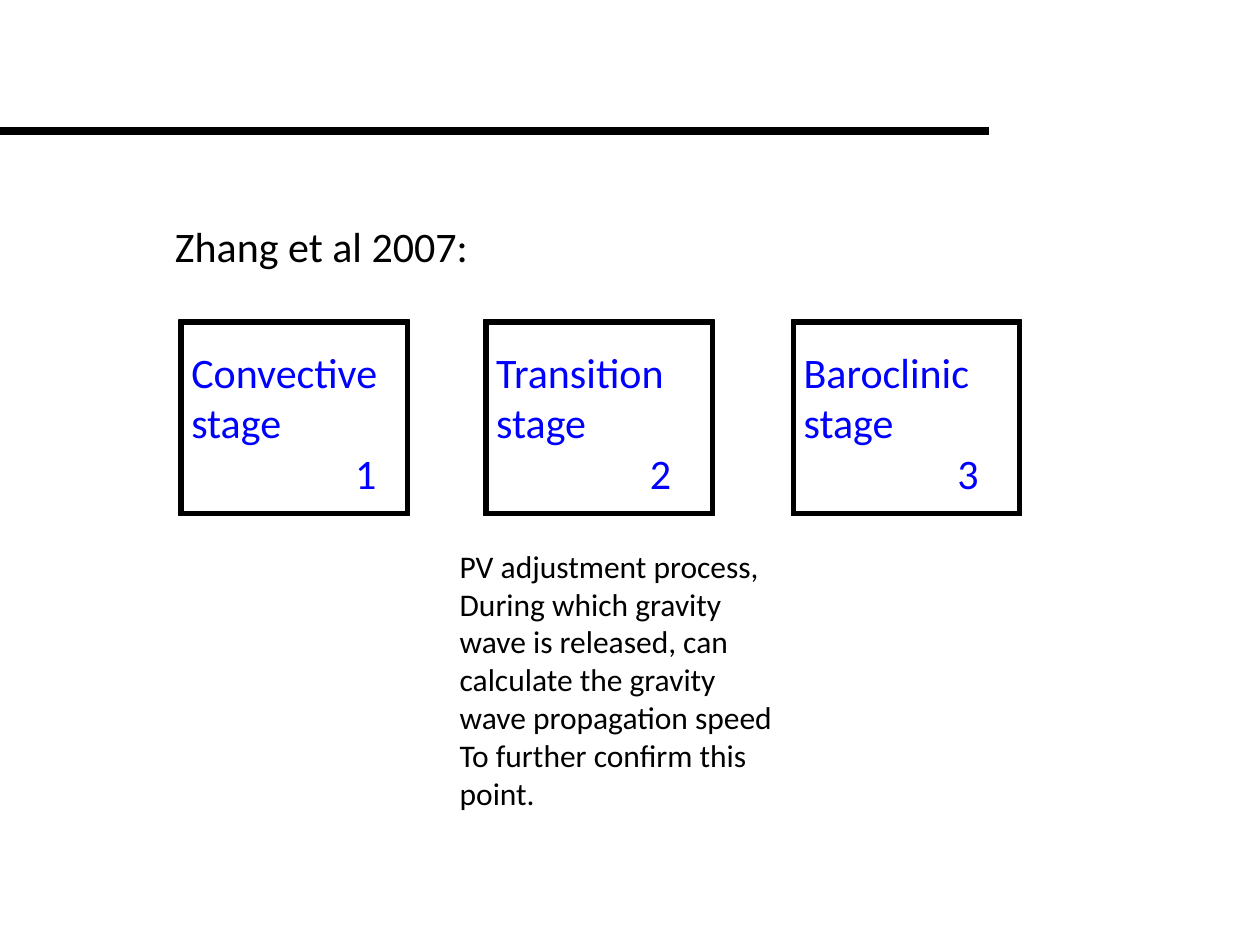
from pptx import Presentation
from pptx import util as u
from pptx.dml.color import RGBColor
from pptx.enum import shapes, text
from pptx.oxml import parse_xml
from pptx.oxml.ns import nsdecls


def colour(value):
    return RGBColor.from_string(value)


class StageSlide:
    font = "Calibri"
    ink = "000000"
    accent = "0000FF"

    def __init__(self, slide):
        self.slide = slide

    def rule(self, left, right, y, weight):
        line = self.slide.shapes.add_connector(
            shapes.MSO_CONNECTOR.STRAIGHT,
            u.Inches(left), u.Inches(y), u.Inches(right), u.Inches(y))
        line.line.color.rgb = colour(self.ink)
        line.line.width = u.Pt(weight)
        line._element.spPr.append(parse_xml(f"<a:effectLst {nsdecls('a')}/>"))

    def words(self, left, top, width, height, lines, size, ink, wrap=True):
        box = self.slide.shapes.add_textbox(
            u.Inches(left), u.Inches(top), u.Inches(width), u.Inches(height))
        frame = box.text_frame
        frame.text = "\n".join(lines)
        frame.word_wrap = wrap
        frame.auto_size = text.MSO_AUTO_SIZE.SHAPE_TO_FIT_TEXT
        for paragraph in frame.paragraphs:
            for run in paragraph.runs:
                run.font.name = self.font
                run.font.size = u.Pt(size)
                run.font.color.rgb = colour(ink)
        return frame

    def stage(self, left, name, number, indent):
        border = self.slide.shapes.add_shape(
            shapes.MSO_SHAPE.FRAME,
            u.Inches(left), u.Inches(2.54), u.Inches(1.83), u.Inches(1.55))
        border.adjustments[0] = 0.021
        border.shadow.inherit = False
        border.fill.solid()
        border.fill.fore_color.rgb = colour(self.ink)
        border.line.color.rgb = colour(self.ink)
        border.line.width = u.Pt(0.75)
        label = self.words(left, 2.7, 1.83, 1.31, [name, str(number)], 24, self.accent)
        properties = label.paragraphs[1]._p.get_or_add_pPr()
        properties.set("marL", str(u.Inches(indent)))


def main():
    deck = Presentation()
    deck.slide_width, deck.slide_height = u.Inches(10), u.Inches(7.5)
    page = StageSlide(deck.slides.add_slide(deck.slide_layouts[6]))

    page.words(1.29, 1.7, 2.55, 0.5, ["Zhang et al 2007:"], 24, page.ink, wrap=False)
    stages = [
        (1.42, "Convective stage", 1.3),
        (3.84, "Transition stage", 1.22),
        (6.28, "Baroclinic stage", 1.22),
    ]
    for number, (left, name, indent) in enumerate(stages, 1):
        page.stage(left, name, number, indent)
    page.rule(0, 7.85, 1.04, 4.5)
    page.words(3.55, 4.29, 2.73, 2.22, [
        "PV adjustment process,",
        "During which gravity wave is released, can calculate the gravity wave propagation speed",
        "To further confirm this point.",
    ], 18, page.ink)

    deck.save("out.pptx")


if __name__ == "__main__":
    main()
